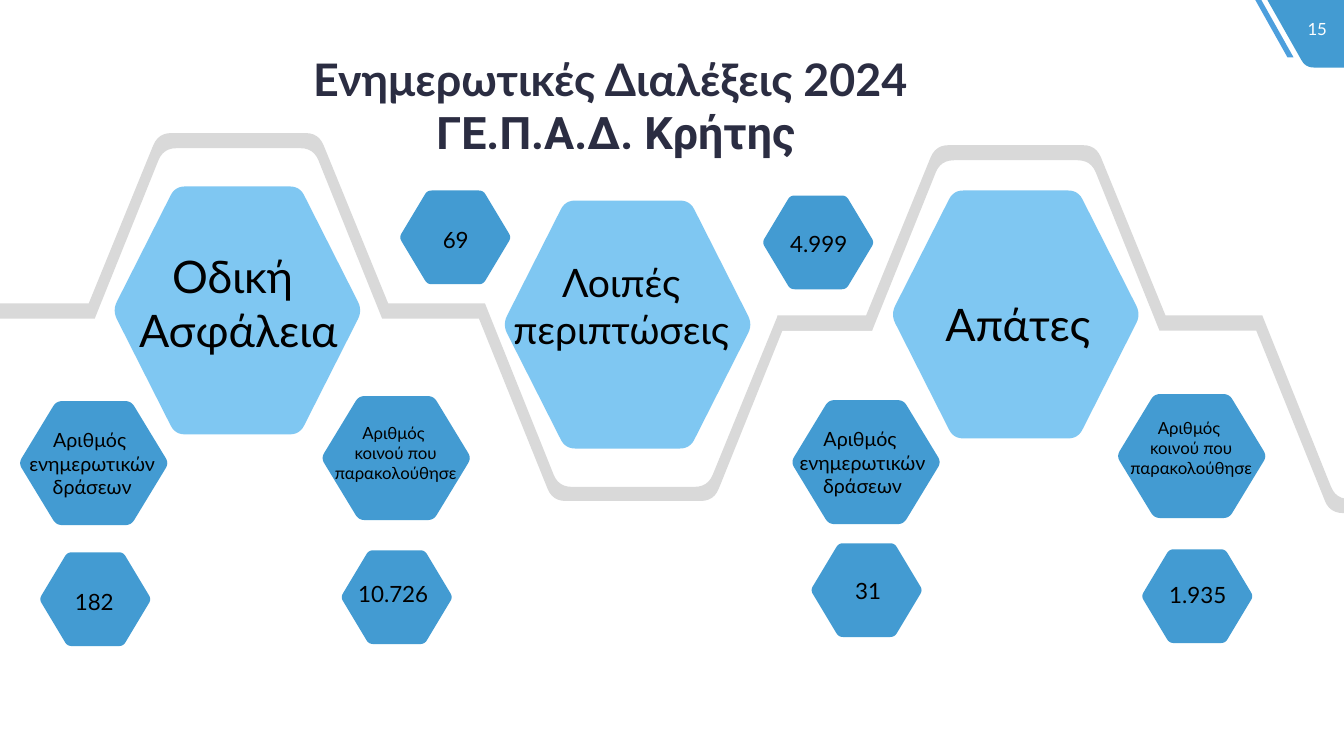
from dataclasses import dataclass
from math import dist

from lxml.etree import SubElement
from pptx import Presentation
from pptx.dml.color import RGBColor
from pptx.enum.text import MSO_ANCHOR as Anchor, MSO_AUTO_SIZE as AutoSize, PP_ALIGN as Align
from pptx.oxml.ns import qn
from pptx.util import Inches, Pt


@dataclass(frozen=True)
class Theme:
    body_font: str = "Lato"
    accent_font: str = "Roboto"
    ink: str = "000000"
    title_ink: str = "2B2D42"
    white: str = "FFFFFF"
    blue: str = "1483C7"
    light_blue: str = "60B9EF"
    stripe: str = "4D9FDD"
    trail: str = "D9D9D9"
    opacity: int = 80
    heading: int = 32
    topic: int = 28
    value: int = 16
    label: int = 14
    small: int = 12


THEME = Theme()

# Hexagon sizes: width, height
LARGE = (2.43, 2.46)
MEDIUM = (1.46, 1.23)
SMALL = (1.09, 0.93)

ACTIONS = ["Αριθμός ", "ενημερωτικών δράσεων"]
AUDIENCE = ["Αριθμός ", "κοινού που παρακολούθησε"]

# Hexagon left, top; caption lines; caption left, top, width, height; type size
TOPICS = [
    (1.14, 1.85, ["Οδική ", "Ασφάλεια"], (1.26, 2.42, 2.21, 1.18), THEME.heading),
    (5.01, 1.99, ["Λοιπές", "περιπτώσεις"], (4.8, 2.51, 2.72, 1.04), THEME.topic),
    (8.86, 1.89, ["Απάτες"], (8.99, 2.89, 2.21, 0.64), THEME.heading),
]
LABELS = [
    (0.2, 3.98, ACTIONS, (0.16, 4.2, 1.51, 0.81), THEME.label),
    (3.2, 3.93, AUDIENCE, (3.01, 4.14, 1.83, 0.71), THEME.small),
    (7.86, 3.97, ACTIONS, (7.8, 4.19, 1.51, 0.81), THEME.label),
    (11.09, 3.91, AUDIENCE, (10.9, 4.09, 1.83, 0.71), THEME.small),
]
VALUES = [
    (0.4, 5.48, ["182"], (0.48, 5.79, 0.91, 0.37), THEME.value),
    (3.39, 5.46, ["10.726"], (3.42, 5.71, 0.96, 0.37), THEME.value),
    (3.97, 1.89, ["69"], (4.07, 2.19, 0.9, 0.37), THEME.value),
    (7.57, 1.94, ["4.999"], (7.67, 2.23, 0.9, 0.37), THEME.value),
    (8.05, 5.39, ["31"], (8.19, 5.68, 0.84, 0.37), THEME.value),
    (11.33, 5.45, ["1.935"], (11.46, 5.72, 0.84, 0.37), THEME.value),
]

# Trail outline: x, y, corner cut
TRAIL = [
    (0, 1.69, 0), (0.88, 1.69, 0), (1.57, 0, 0.13), (3.16, 0, 0.13),
    (3.85, 1.69, 0), (4.81, 1.69, 0), (5.54, 3.51, 0.13), (7.02, 3.51, 0.13),
    (7.71, 1.82, 0), (8.65, 1.82, 0), (8.65, 1.96, 0), (7.76, 1.96, 0),
    (7.08, 3.65, 0.13), (5.48, 3.65, 0.13), (4.75, 1.84, 0), (3.79, 1.84, 0),
    (3.11, 0.15, 0.13), (1.62, 0.15, 0.13), (0.94, 1.84, 0), (0, 1.84, 0),
]
TRAIL_STARTS = [(0, 1.32), (7.71, 1.44)]

CORNER_TAB = [(12.57, 0, 0), (13.33, 0, 0), (13.33, 0.67, 0), (12.95, 0.67, 0.08)]
CORNER_STRIPE = [(12.45, 0, 0), (12.51, 0, 0), (12.83, 0.57, 0), (12.77, 0.57, 0)]


def toward(start, end, length):
    share = length / dist(start, end)
    return tuple(a + (b - a) * share for a, b in zip(start, end))


def rounded(corners, steps=6):
    """Replace each cut corner by points along a quadratic curve."""
    points = []
    for index, (x, y, cut) in enumerate(corners):
        corner = (x, y)
        if not cut:
            points.append(corner)
            continue
        before = toward(corner, corners[index - 1][:2], cut)
        after = toward(corner, corners[(index + 1) % len(corners)][:2], cut)
        for step in range(steps + 1):
            t = step / steps
            points.append(tuple((1 - t) ** 2 * a + 2 * t * (1 - t) * b + t * t * c
                                for a, b, c in zip(before, corner, after)))
    return points


def add_outline(page, corners, color, opacity=100, left=0, top=0):
    points = [(Inches(left + x), Inches(top + y)) for x, y in rounded(corners)]
    builder = page.shapes.build_freeform(*points[0])
    builder.add_line_segments(points[1:], close=True)
    shape = builder.convert_to_shape()
    shape.shadow.inherit = False
    shape.line.fill.background()
    shape.fill.solid()
    shape.fill.fore_color.rgb = RGBColor.from_string(color)
    if opacity < 100:
        tint = shape.fill._xPr.find(qn("a:solidFill"))[0]
        SubElement(tint, qn("a:alpha")).set("val", str(opacity * 1000))


def add_hexagon(page, left, top, size, color):
    width, height = size
    xs = [-0.01, 0.246, 0.754, 1.01, 0.754, 0.246]
    ys = [0.5, 0, 0, 0.5, 1, 1]
    corners = [(x * width, y * height, 0.04 * width) for x, y in zip(xs, ys)]
    add_outline(page, corners, color, THEME.opacity, left, top)


def write_lines(frame, lines, size, color, bold=False):
    frame.text = "\n".join(lines)
    for para in frame.paragraphs:
        para.alignment = Align.CENTER
        font = para.font
        font.name, font.size, font.bold = THEME.body_font, Pt(size), bold
        font.color.rgb = RGBColor.from_string(color)


def add_caption(page, lines, area, size, color=THEME.ink, wrap=True):
    box = page.shapes.add_textbox(*map(Inches, area))
    box.text_frame.word_wrap = wrap
    write_lines(box.text_frame, lines, size, color)


def set_title(page, lines):
    title = page.shapes.title
    title.left, title.top, title.width, title.height = map(Inches, (2.86, 0.46, 6.5, 1.18))
    frame = title.text_frame
    frame.word_wrap = False
    frame.auto_size = AutoSize.NONE
    frame.vertical_anchor = Anchor.TOP
    write_lines(frame, lines, THEME.heading, THEME.title_ink, bold=True)
    frame.paragraphs[1].font.name = THEME.accent_font


def main():
    deck = Presentation()
    deck.slide_width, deck.slide_height = Inches(13.33), Inches(7.5)
    page = deck.slides.add_slide(deck.slide_layouts[5])
    set_title(page, ["Ενημερωτικές Διαλέξεις 2024 ", "ΓΕ.Π.Α.Δ. Κρήτης"])

    # Page number corner
    add_outline(page, CORNER_TAB, THEME.blue, THEME.opacity)
    add_outline(page, CORNER_STRIPE, THEME.stripe)
    add_caption(page, ["15"], (12.86, 0.14, 0.41, 0.3), THEME.small, THEME.white, wrap=False)

    # Winding trail
    for left, top in TRAIL_STARTS:
        add_outline(page, TRAIL, THEME.trail, left=left, top=top)

    # Hexagons with their captions
    for group, size, color in ((TOPICS, LARGE, THEME.light_blue),
                               (LABELS, MEDIUM, THEME.blue),
                               (VALUES, SMALL, THEME.blue)):
        for left, top, lines, area, type_size in group:
            add_hexagon(page, left, top, size, color)
            add_caption(page, lines, area, type_size)

    deck.save("out.pptx")


if __name__ == "__main__":
    main()
